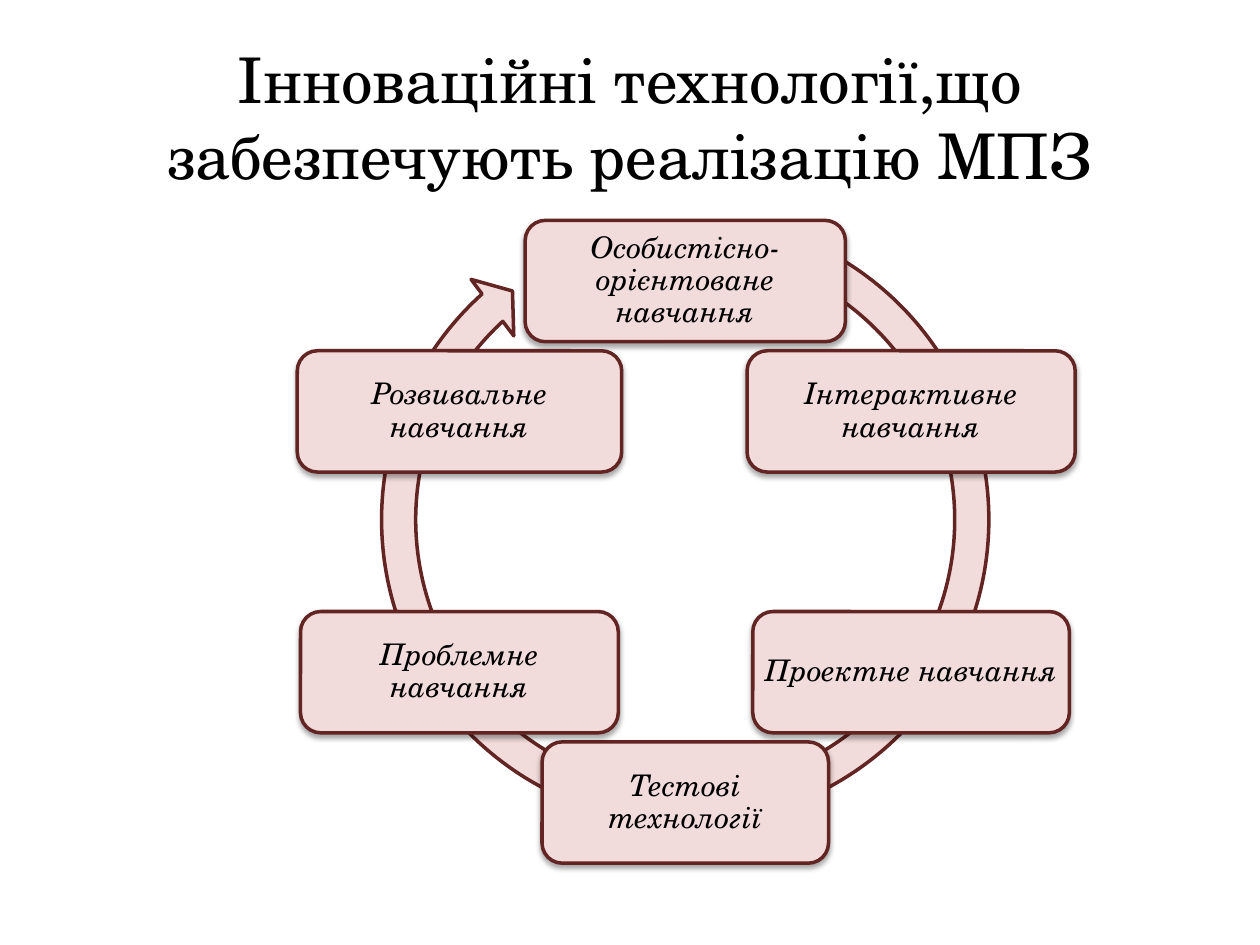
import math
from dataclasses import dataclass

import lxml.etree
import pptx
import pptx.dml.color
import pptx.enum.shapes
import pptx.enum.text
import pptx.oxml.ns
import pptx.util

Pt = pptx.util.Pt
SHAPES = pptx.enum.shapes.MSO_SHAPE
FONT_NAME = "TeX Gyre Schola"
FILL_COLOUR = "F2DCDB"
LINE_COLOUR = "632523"
TEXT_COLOUR = "000000"
CENTRE_X, CENTRE_Y, RADIUS = 391.6, 309.6, 149
ARROW_SIZE = 368
CARD_HEIGHT = 69.3


@dataclass
class Technology:
    text: str
    width: float


TECHNOLOGIES = [
    Technology("Особистісно-орієнтоване навчання", 183),
    Technology("Інтерактивне навчання", 187.5),
    Technology("Проектне навчання", 180.9),
    Technology("Тестові технології", 163.7),
    Technology("Проблемне навчання", 181.6),
    Technology("Розвивальне навчання", 185.4),
]


def colour(value: str) -> pptx.dml.color.RGBColor:
    return pptx.dml.color.RGBColor.from_string(value)


def paint(shape) -> None:
    shape.shadow.inherit = False
    shape.fill.solid()
    shape.fill.fore_color.rgb = colour(FILL_COLOUR)
    shape.line.color.rgb = colour(LINE_COLOUR)
    shape.line.width = Pt(2)


def add_shadow(shape) -> None:
    effects = shape.element.spPr.find(pptx.oxml.ns.qn("a:effectLst"))
    shadow = lxml.etree.SubElement(
        effects, pptx.oxml.ns.qn("a:outerShdw"),
        blurRad=str(Pt(3.1)), dist=str(Pt(1.8)), dir="5400000", rotWithShape="0")
    black = lxml.etree.SubElement(shadow, pptx.oxml.ns.qn("a:srgbClr"), val="000000")
    lxml.etree.SubElement(black, pptx.oxml.ns.qn("a:alpha"), val="35000")


def write(shape, text: str, size: float, italic: bool, spacing: float) -> None:
    frame = shape.text_frame
    frame.text = text
    frame.word_wrap = True
    frame.vertical_anchor = pptx.enum.text.MSO_ANCHOR.MIDDLE
    paragraph = frame.paragraphs[0]
    paragraph.alignment = pptx.enum.text.PP_ALIGN.CENTER
    paragraph.line_spacing = spacing
    for span in paragraph.runs:
        span.font.name = FONT_NAME
        span.font.size = Pt(size)
        span.font.italic = italic
        span.font.color.rgb = colour(TEXT_COLOUR)


def add_title(page, text: str) -> None:
    box = page.shapes.add_textbox(Pt(36), Pt(21.6), Pt(648), Pt(90))
    write(box, text, 36, False, 1.0)


def add_cycle_arrow(page) -> None:
    arrow = page.shapes.add_shape(
        SHAPES.CIRCULAR_ARROW, Pt(CENTRE_X - ARROW_SIZE / 2), Pt(113),
        Pt(ARROW_SIZE), Pt(ARROW_SIZE))
    for index, value in enumerate([0.053, 3.126, 136.63, 174.662, 0.055]):
        arrow.adjustments[index] = value
    paint(arrow)


def add_card(page, technology: Technology, angle: float) -> None:
    middle_x = CENTRE_X + RADIUS * math.sin(angle)
    middle_y = CENTRE_Y - RADIUS * math.cos(angle)
    card = page.shapes.add_shape(
        SHAPES.ROUNDED_RECTANGLE, Pt(middle_x - technology.width / 2),
        Pt(middle_y - CARD_HEIGHT / 2), Pt(technology.width), Pt(CARD_HEIGHT))
    paint(card)
    add_shadow(card)
    frame = card.text_frame
    frame.margin_left = frame.margin_right = Pt(1.7)
    frame.margin_top = frame.margin_bottom = Pt(1.7)
    write(card, technology.text, 17, True, 0.9)


def main() -> None:
    deck = pptx.Presentation()
    deck.slide_width, deck.slide_height = Pt(720), Pt(540)
    page = deck.slides.add_slide(deck.slide_layouts[6])
    add_title(page, "Інноваційні технології,що забезпечують реалізацію МПЗ")
    add_cycle_arrow(page)
    for index, technology in enumerate(TECHNOLOGIES):
        add_card(page, technology, math.tau * index / len(TECHNOLOGIES))
    deck.save("out.pptx")


if __name__ == "__main__":
    main()
